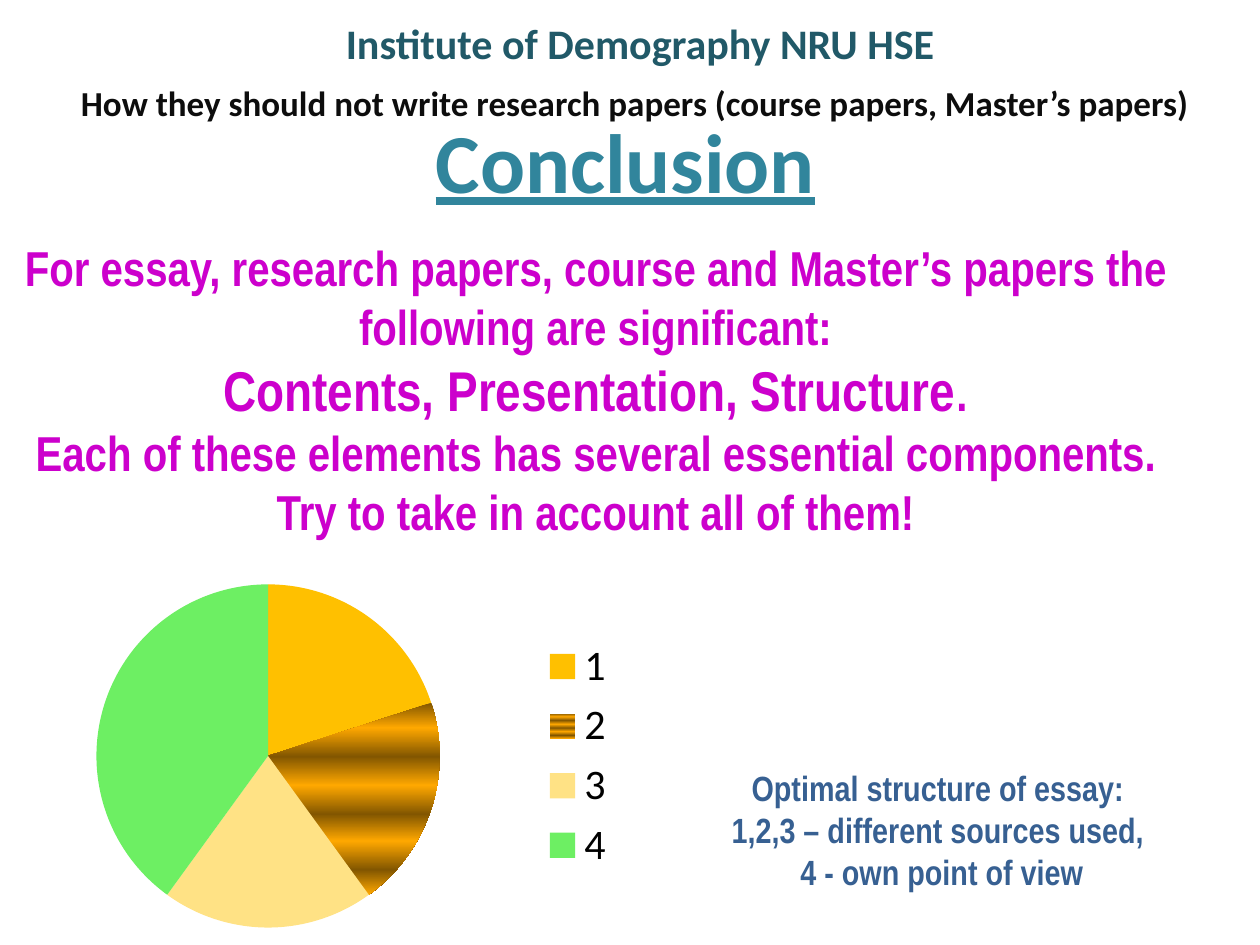
import pptx
import pptx.chart.data
import pptx.dml.color
import pptx.enum.chart
import pptx.enum.text
import pptx.oxml
import pptx.oxml.ns
import pptx.util
from lxml import etree
from pptx.util import Inches

THEME = {
    "heading_font": "Calibri",
    "body_font": "Arial Narrow",
    "institute": "215968",
    "subtitle": "0D0D0D",
    "conclusion": "31859C",
    "message": "CC00CC",
    "note": "376092",
    "legend": "000000",
    "small": 20,
    "medium": 24,
    "body": 28,
    "strong": 32,
    "large": 48,
}

INSTITUTE = [[("Institute of Demography NRU HSE", "medium")]]
SUBTITLE = [[("How they should not write research papers (course papers, Master’s papers)", "small")]]
CONCLUSION = [[("Conclusion", "large")]]
MESSAGE = [
    [("For essay, research papers, course and Master’s papers the following are significant:", "body")],
    [("Contents, Presentation, Structure", "strong"), (".", "body")],
    [("Each of these elements has several essential components. Try to take in account all of them!", "body")],
]
NOTE = [[("Optimal structure of essay: \n1,2,3 – different sources used, \n4 - own point of view", "small")]]

SHARES = {"1": 20, "2": 20, "3": 20, "4": 40}
DARK, BRIGHT = "825600", "FFA800"
BAND_STOPS = [0, 13, 28, 43, 58, 72, 87, 100]
SLICE_FILLS = ["FFC000", None, "FFE285", "6DEF63"]


def rgb(value):
    return pptx.dml.color.RGBColor.from_string(value)


def write_text(box, paragraphs, at, color, font="heading_font", underline=None,
               anchor=pptx.enum.text.MSO_ANCHOR.MIDDLE, space_before=0):
    box.left, box.top, box.width, box.height = map(Inches, at)
    frame = box.text_frame
    frame.word_wrap = True
    frame.auto_size = pptx.enum.text.MSO_AUTO_SIZE.NONE
    frame.vertical_anchor = anchor
    for index, pieces in enumerate(paragraphs):
        para = frame.add_paragraph() if index else frame.paragraphs[0]
        para.alignment = pptx.enum.text.PP_ALIGN.CENTER
        para.space_before = pptx.util.Pt(space_before)
        para.line_spacing = 1.0
        for text, size in pieces:
            for number, line in enumerate(text.split("\n")):
                if number:
                    para.add_line_break()
                span = para.add_run()
                span.text = line
                span.font.name = THEME[font]
                span.font.size = pptx.util.Pt(THEME[size])
                span.font.bold = True
                span.font.underline = underline
                span.font.color.rgb = rgb(THEME[color])


def fill_with_bands(fill, chart):
    fill.gradient()
    fill.gradient_angle = 270
    stops = chart.element.xpath(".//a:gsLst")[0]
    for stop in list(stops):
        stops.remove(stop)
    qn = pptx.oxml.ns.qn
    for index, position in enumerate(BAND_STOPS):
        stop = etree.SubElement(stops, qn("a:gs"), pos=str(position * 1000))
        etree.SubElement(stop, qn("a:srgbClr"), val=BRIGHT if index % 2 else DARK)


def add_pie(page, at):
    data = pptx.chart.data.CategoryChartData()
    data.categories = list(SHARES)
    data.add_series("Series 1", list(SHARES.values()))
    chart = page.shapes.add_chart(
        pptx.enum.chart.XL_CHART_TYPE.PIE, *map(Inches, at), data).chart
    chart.has_title = False
    chart.font.name = THEME["heading_font"]
    chart.font.size = pptx.util.Pt(10)
    chart.font.color.rgb = rgb(THEME["legend"])
    chart.has_legend = True
    chart.legend.position = pptx.enum.chart.XL_LEGEND_POSITION.RIGHT
    chart.legend.include_in_layout = False
    chart.legend.font.size = pptx.util.Pt(THEME["medium"])
    chart.plots[0].vary_by_categories = True
    for index, color in enumerate(SLICE_FILLS):
        fill = chart.plots[0].series[0].points[index].format.fill
        if color:
            fill.solid()
            fill.fore_color.rgb = rgb(color)
        else:
            fill_with_bands(fill, chart)


def add_box(page):
    return page.shapes.add_textbox(0, 0, 0, 0)


def main():
    deck = pptx.Presentation()
    deck.slide_width, deck.slide_height = Inches(10), Inches(7.5)
    page = deck.slides.add_slide(deck.slide_layouts[0])
    write_text(page.shapes.title, INSTITUTE, (0.83, 0, 8.5, 0.68), "institute")
    write_text(page.placeholders[1], SUBTITLE, (0.51, 0.6, 9.06, 0.55), "subtitle",
               anchor=pptx.enum.text.MSO_ANCHOR.TOP, space_before=4)
    write_text(add_box(page), CONCLUSION, (0.28, 0.99, 9.37, 0.55), "conclusion", underline=True)
    write_text(add_box(page), MESSAGE, (0, 1.55, 9.45, 3.07), "message", font="body_font")
    add_pie(page, (0, 4.5, 5, 3))
    write_text(add_box(page), NOTE, (5.31, 5.95, 4.33, 1.27), "note", font="body_font")
    deck.save("out.pptx")


if __name__ == "__main__":
    main()
